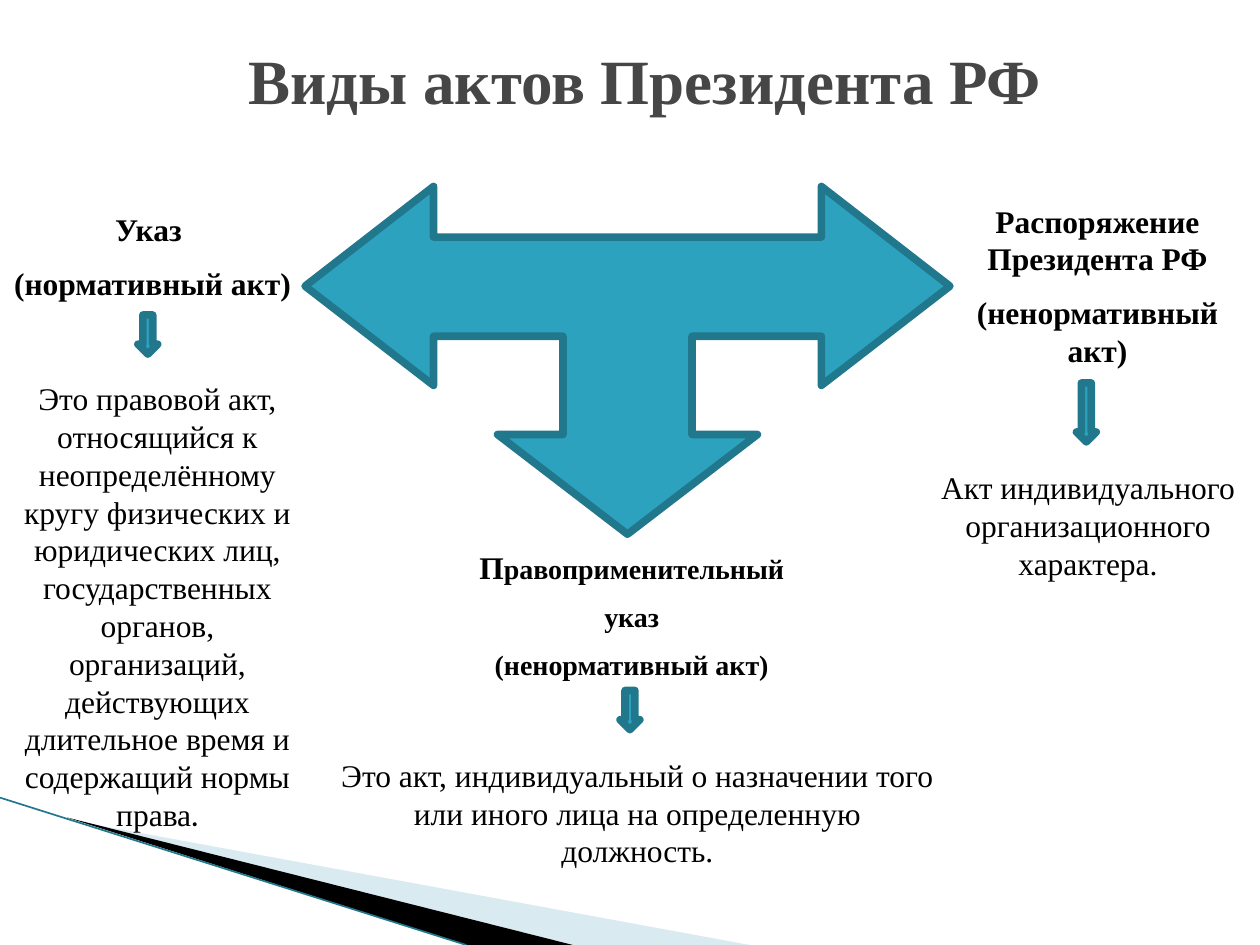
from lxml import etree
from pptx import Presentation
from pptx.dml.color import RGBColor
from pptx.enum.shapes import MSO_CONNECTOR, MSO_SHAPE
from pptx.enum.text import MSO_ANCHOR, PP_ALIGN
from pptx.oxml.ns import qn
from pptx.util import Cm, Pt

STRAIGHT = MSO_CONNECTOR.STRAIGHT
DOWN_ARROW = MSO_SHAPE.DOWN_ARROW
MIDDLE = MSO_ANCHOR.MIDDLE
CENTER = PP_ALIGN.CENTER
FONT = "Times New Roman"
TITLE_ONLY = 5
COLORS = {
    "title": "464646",
    "text": "000000",
    "arrow": "2DA2BF",
    "outline": "21788D",
    "pale": "A0CBDC",
    "black": "000000",
}


def color(name):
    """Return the named colour."""
    return RGBColor.from_string(COLORS[name])


def format_run(run, size, color_name="text", bold=False, font=FONT):
    """Apply font settings to a run."""
    run.font.name = font
    run.font.size = Pt(size)
    run.font.bold = bold
    run.font.color.rgb = color(color_name)


def style_arrow(shape):
    """Give an arrow its fill and thick rounded outline."""
    shape.shadow.inherit = False
    shape.fill.solid()
    shape.fill.fore_color.rgb = color("arrow")
    shape.line.color.rgb = color("outline")
    shape.line.width = Pt(4.33)
    etree.SubElement(shape.line._get_or_add_ln(), qn("a:round"))


def add_polygon(slide, points):
    """Draw a closed outline through points given in centimetres."""
    corners = [(Cm(x), Cm(y)) for x, y in points]
    builder = slide.shapes.build_freeform(*corners[0])
    builder.add_line_segments(corners[1:], close=True)
    return builder.convert_to_shape()


def add_wedge(slide, points, color_name, opacity=100):
    """Add a corner wedge without outline."""
    shape = add_polygon(slide, points)
    shape.shadow.inherit = False
    shape.fill.solid()
    shape.fill.fore_color.rgb = color(color_name)
    shape.line.fill.background()
    if opacity < 100:
        fill_color = shape.fill._xPr.find(qn("a:solidFill"))[0]
        etree.SubElement(fill_color, qn("a:alpha"), val=str(opacity * 1000))


def add_corner_decoration(slide):
    """Add the wedges and the line in the lower left corner."""
    add_wedge(slide, [(1.4, 16.53), (15.11, 19.05), (11.58, 19.05)], "pale", 40)
    add_wedge(slide, [(1.35, 16.48), (11.55, 19.05), (9.4, 19.05)], "black")
    line = slide.shapes.add_connector(STRAIGHT, Cm(0), Cm(16.08), Cm(9.4), Cm(19.05))
    line.line.color.rgb = color("outline")
    line.line.width = Pt(0.95)
    etree.SubElement(line._element.spPr, qn("a:effectLst"))


def add_three_way_arrow(slide):
    """Add the symmetric arrow pointing left, right and down."""
    center = 12.65
    right_half = [
        (2.62, 8.76), (1.3, 8.76), (1.3, 6.78), (3.91, 6.78), (3.91, 7.77),
        (6.5, 5.77), (3.91, 3.76), (3.91, 4.78),
    ]
    right = [(center + x, y) for x, y in right_half]
    left = [(center - x, y) for x, y in reversed(right_half)]
    style_arrow(add_polygon(slide, [(center, 10.77)] + right + left))


def add_down_arrow(slide, left, top, height):
    """Add a small arrow from an act to its description."""
    style_arrow(slide.shapes.add_shape(DOWN_ARROW, Cm(left), Cm(top), Cm(0.4), Cm(height)))


def add_text(slide, box, lines, size=18, bold=False, wrap=True):
    """Add a text box with one centred paragraph for each line."""
    text_frame = slide.shapes.add_textbox(*map(Cm, box)).text_frame
    text_frame.word_wrap = wrap
    text_frame.text = "\n".join(lines)
    for index, paragraph in enumerate(text_frame.paragraphs):
        paragraph.alignment = CENTER
        if index:
            paragraph.space_before = Pt(size / 2)
        for run in paragraph.runs:
            format_run(run, size, bold=bold)
    return text_frame


def add_title(slide, text):
    """Place and format the title."""
    title = slide.shapes.title
    title.left, title.top, title.width, title.height = map(Cm, (1.57, 0, 22.86, 3.18))
    title.text_frame.text = text
    title.text_frame.vertical_anchor = MIDDLE
    paragraph = title.text_frame.paragraphs[0]
    paragraph.alignment = CENTER
    format_run(paragraph.runs[0], 36, "title", bold=True)


def add_law_enforcement_heading(slide):
    """Add the middle heading with its larger initial."""
    text_frame = add_text(slide, (8.99, 10.92, 7.49, 3.07),
                          ["П", "указ", "(ненормативный акт)"], 16, bold=True)
    first = text_frame.paragraphs[0]
    first.runs[0].font.size = Pt(18)
    rest = first.add_run()
    rest.text = "равоприменительный"
    format_run(rest, 16, bold=True)


def add_decree_description(slide):
    """Add the left description with its closing full stop."""
    text_frame = add_text(slide, (0, 7.52, 6.35, 9.5), [
        "Это правовой акт, относящийся к неопределённому кругу физических и "
        "юридических лиц, государственных органов, организаций, действующих "
        "длительное время и содержащий нормы права"])
    stop = text_frame.paragraphs[0].add_run()
    stop.text = "."
    format_run(stop, 18, font="Lato")


def main():
    """Build the slide and save it."""
    presentation = Presentation()
    presentation.slide_width, presentation.slide_height = Cm(25.4), Cm(19.05)
    slide = presentation.slides.add_slide(presentation.slide_layouts[TITLE_ONLY])
    add_corner_decoration(slide)
    add_title(slide, "Виды актов Президента РФ")
    add_three_way_arrow(slide)
    add_text(slide, (0, 4.11, 6.15, 3.33), ["Указ ", "(нормативный акт)"],
             bold=True, wrap=False)
    add_text(slide, (18.85, 3.94, 6.55, 3.71),
             ["Распоряжение Президента РФ", "(ненормативный акт)"], bold=True)
    add_law_enforcement_heading(slide)
    add_decree_description(slide)
    add_text(slide, (6.5, 15.11, 12.7, 2.57),
             ["Это акт, индивидуальный о назначении того или иного лица на "
              "определенную должность."])
    add_text(slide, (18.47, 9.32, 6.93, 2.57),
             ["Акт индивидуального организационного характера."])
    for left, top, height in ((2.78, 6.35, 0.79), (12.5, 13.92, 0.79), (21.7, 7.72, 1.19)):
        add_down_arrow(slide, left, top, height)
    presentation.save("out.pptx")


if __name__ == "__main__":
    main()
